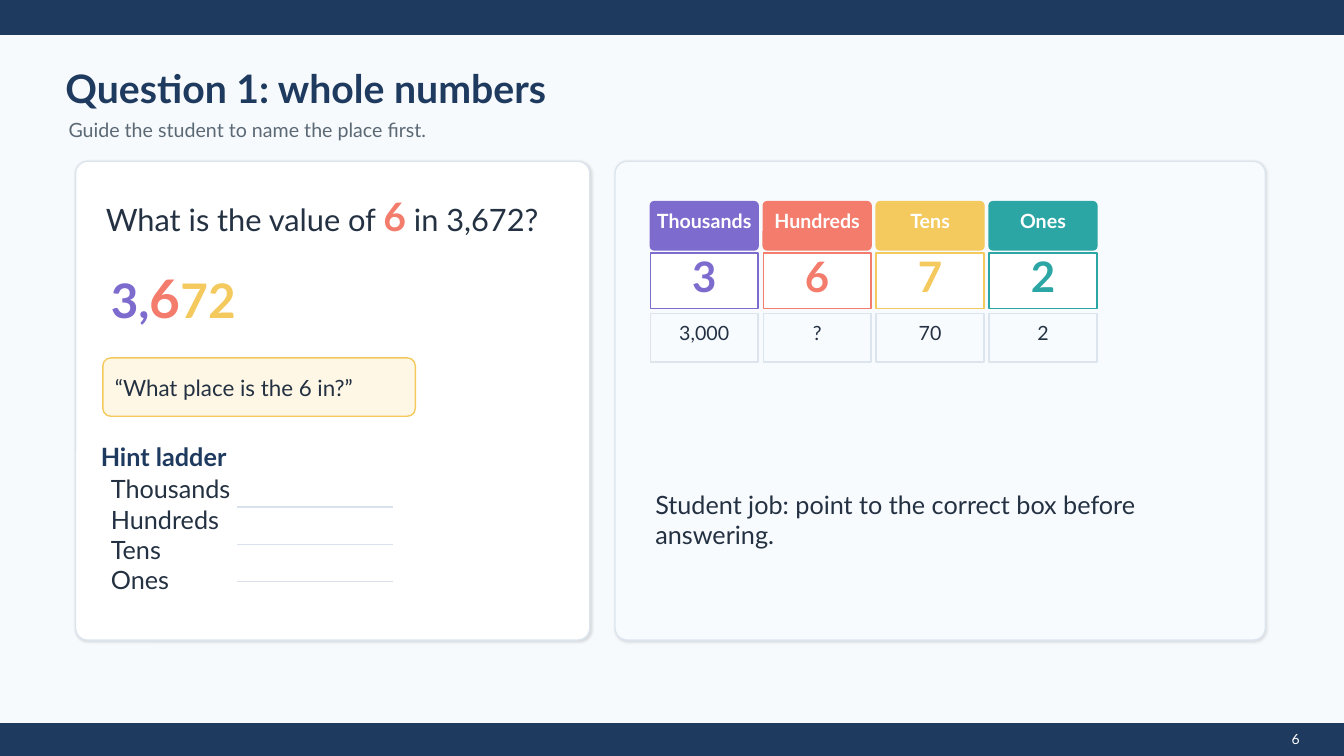
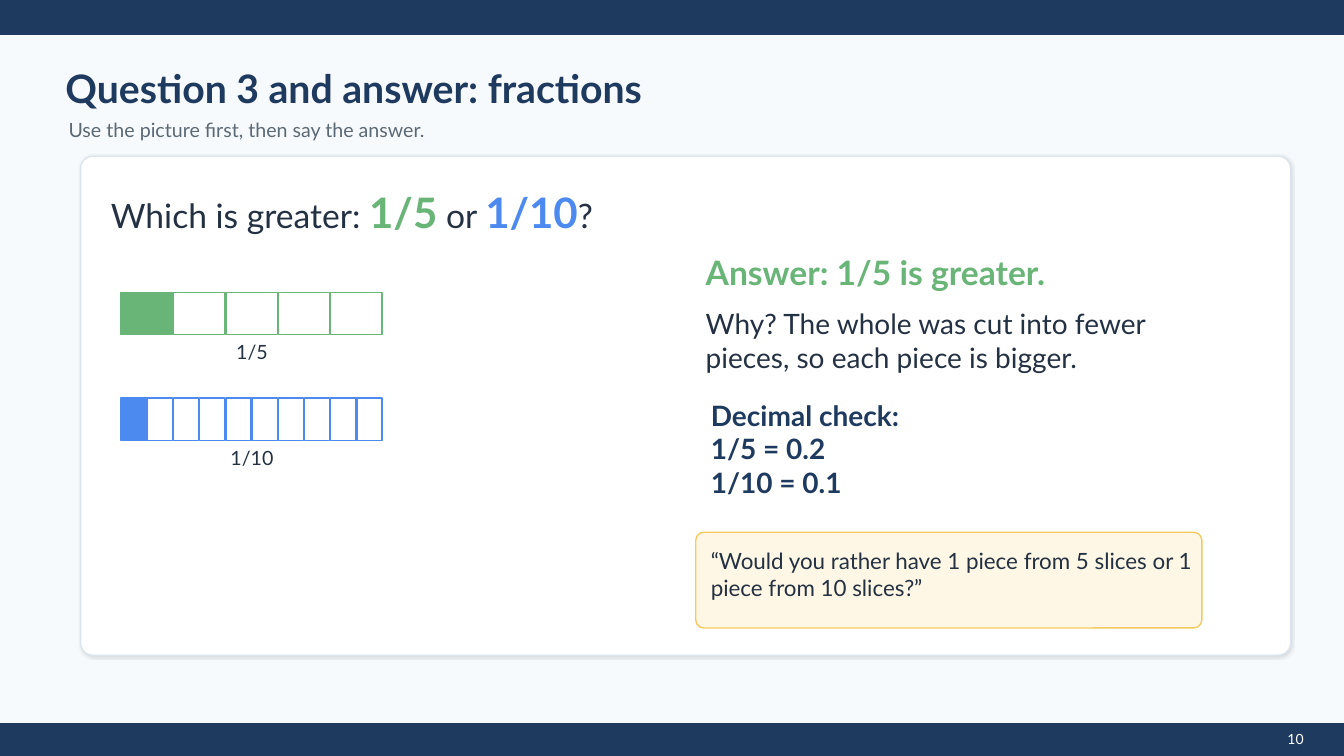
from dataclasses import dataclass
from typing import NamedTuple

from lxml.etree import SubElement
from pptx import Presentation
from pptx.dml.color import RGBColor
from pptx.enum.shapes import MSO_CONNECTOR as Link, MSO_SHAPE as Kind
from pptx.enum.text import MSO_ANCHOR as Anchor, PP_ALIGN as Align
from pptx.oxml.ns import qn
from pptx.shapes.autoshape import Shape
from pptx.slide import Slide
from pptx.util import Inches, Pt

FONT = "Lato"
COLORS = {
    "page": "F7FAFC",
    "navy": "1F3A5F",
    "ink": "233142",
    "gray": "5B6975",
    "white": "FFFFFF",
    "pale": "F8FBFE",
    "edge": "DCE5EE",
    "rule": "D9E2EC",
    "cream": "FFF7E5",
    "violet": "7D6BCE",
    "coral": "F47C6C",
    "gold": "F4C95D",
    "teal": "2CA6A4",
    "green": "69B578",
    "blue": "4D8AF0",
}


class Box(NamedTuple):
    left: float
    top: float
    width: float
    height: float


class Run(NamedTuple):
    text: str
    size: float
    color: str = "ink"
    bold: bool = False


@dataclass
class Place:
    name: str
    digit: str
    value: str
    color: str


@dataclass
class Bar:
    pieces: int
    top: float
    color: str


def paint(name: str) -> RGBColor:
    return RGBColor.from_string(COLORS[name])


def lengths(box: Box) -> list[Inches]:
    return [Inches(side) for side in box]


def add_text(slide: Slide, box: Box, text: str | list[Run], *, size: float = 18,
             color: str = "ink", bold: bool = False, align: Align = Align.LEFT,
             anchor: Anchor = Anchor.MIDDLE, inset: bool = False) -> None:
    frame = slide.shapes.add_textbox(*lengths(box)).text_frame
    frame.word_wrap = True
    frame.vertical_anchor = anchor
    if not inset:
        frame.margin_left = frame.margin_right = 0
        frame.margin_top = frame.margin_bottom = 0
    if isinstance(text, str):
        lines = [[Run(line, size, color, bold)] for line in text.split("\n")]
    else:
        lines = [text]
    for index, line in enumerate(lines):
        para = frame.add_paragraph() if index else frame.paragraphs[0]
        para.alignment = align
        for item in line:
            run = para.add_run()
            run.text = item.text
            run.font.name = FONT
            run.font.size = Pt(item.size)
            run.font.bold = item.bold
            run.font.color.rgb = paint(item.color)


def add_box(slide: Slide, box: Box, fill: str, edge: str, radius: float = 0) -> Shape:
    kind = Kind.ROUNDED_RECTANGLE if radius else Kind.RECTANGLE
    shape = slide.shapes.add_shape(kind, *lengths(box))
    if radius:
        shape.adjustments[0] = radius / min(box.width, box.height)
    shape.fill.solid()
    shape.fill.fore_color.rgb = paint(fill)
    shape.line.color.rgb = paint(edge)
    shape.line.width = Pt(1)
    shape.shadow.inherit = False
    return shape


def add_card(slide: Slide, box: Box, fill: str = "white") -> None:
    card = add_box(slide, box, fill, "edge", 0.12)
    effects = card.element.spPr.find(qn("a:effectLst"))
    shadow = SubElement(effects, qn("a:outerShdw"), blurRad=str(Pt(2)),
                        dist=str(Pt(1)), dir="2700000", algn="tl", rotWithShape="0")
    tint = SubElement(shadow, qn("a:srgbClr"), val="000000")
    SubElement(tint, qn("a:alpha"), val="12000")


def add_quote(slide: Slide, box: Box, inner: Box, text: str) -> None:
    add_box(slide, box, "cream", "gold", 0.08)
    add_text(slide, inner, text, size=16)


def add_rule(slide: Slide, left: float, right: float, top: float) -> None:
    ends = [Inches(side) for side in (left, top, right, top)]
    rule = slide.shapes.add_connector(Link.STRAIGHT, *ends)
    rule.line.color.rgb = paint("rule")
    rule.line.width = Pt(1)
    SubElement(rule.element.spPr, qn("a:effectLst"))


def add_place(slide: Slide, left: float, place: Place) -> None:
    def cell(top: float, height: float) -> Box:
        return Box(left, top, 1.07, height)

    add_box(slide, cell(2, 0.48), place.color, place.color, 0.04)
    add_text(slide, cell(2.08, 0.22), place.name, size=14, color="white",
             bold=True, align=Align.CENTER)
    add_box(slide, cell(2.51, 0.55), "white", place.color)
    add_text(slide, cell(2.58, 0.32), place.digit, size=30, color=place.color,
             bold=True, align=Align.CENTER)
    add_box(slide, cell(3.11, 0.48), "pale", "edge")
    add_text(slide, cell(3.21, 0.18), place.value, size=14, align=Align.CENTER)


def add_bar(slide: Slide, bar: Bar) -> None:
    left, width = 1.2, 2.6
    step = width / bar.pieces
    for index in range(bar.pieces):
        fill = "white" if index else bar.color
        piece = Box(left + index * step, bar.top, step - 0.01, 0.42)
        add_box(slide, piece, fill, bar.color)
    add_text(slide, Box(left, bar.top + 0.48, width, 0.22), f"1/{bar.pieces}",
             size=14, align=Align.CENTER)


def set_master(deck: Presentation, slide: Slide) -> None:
    master = deck.slide_master
    master.background.fill.solid()
    master.background.fill.fore_color.rgb = paint("page")
    for top, height in ((0, 0.34), (7.18, 0.32)):
        band = add_box(slide, Box(0, top, 13.33, height), "navy", "navy")
        master.shapes.element.append(band.element)


def add_slide(deck: Presentation, title: str, lead: str, page: int) -> Slide:
    slide = deck.slides.add_slide(deck.slide_layouts[6])
    if len(deck.slides) == 1:
        set_master(deck, slide)
    add_text(slide, Box(0.65, 0.62, 7, 0.5), title, size=28, color="navy", bold=True)
    add_text(slide, Box(0.68, 1.15, 8.2, 0.28), lead, size=14, color="gray")
    add_text(slide, Box(12.65, 7.2, 0.4, 0.16), str(page), size=10, color="white",
             align=Align.CENTER, anchor=Anchor.TOP, inset=True)
    return slide


def whole_slide(deck: Presentation) -> None:
    slide = add_slide(deck, "Question 1: whole numbers",
                      "Guide the student to name the place first.", 6)
    add_card(slide, Box(0.75, 1.6, 5.1, 4.75))
    add_text(slide, Box(1.05, 1.95, 4.4, 0.38), [
        Run("What is the value of ", 22),
        Run("6", 28, "coral", True),
        Run(" in 3,672?", 22),
    ])
    add_text(slide, Box(1.1, 2.65, 3, 0.6), [
        Run("3,", 34, "violet", True),
        Run("6", 38, "coral", True),
        Run("72", 34, "gold", True),
    ])
    add_quote(slide, Box(1.02, 3.55, 3.1, 0.58), Box(1.14, 3.63, 2.86, 0.42),
              "“What place is the 6 in?”")

    places = [
        Place("Thousands", "3", "3,000", "violet"),
        Place("Hundreds", "6", "?", "coral"),
        Place("Tens", "7", "70", "gold"),
        Place("Ones", "2", "2", "teal"),
    ]
    add_text(slide, Box(1, 4.4, 1.5, 0.25), "Hint ladder", color="navy", bold=True)
    add_text(slide, Box(1.1, 4.8, 1.6, 1), "\n".join(place.name for place in places))
    for index in range(3):
        add_rule(slide, 2.35, 3.9, 5.03 + index * 0.37)

    add_card(slide, Box(6.1, 1.6, 6.45, 4.75), "pale")
    for index, place in enumerate(places):
        add_place(slide, 6.45 + index * 1.12, place)
    add_text(slide, Box(6.5, 5, 4.8, 0.3),
             "Student job: point to the correct box before answering.")


def part_slide(deck: Presentation) -> None:
    slide = add_slide(deck, "Question 3 and answer: fractions",
                      "Use the picture first, then say the answer.", 10)
    add_card(slide, Box(0.8, 1.55, 12, 4.95))
    add_text(slide, Box(1.1, 1.9, 5.1, 0.4), [
        Run("Which is greater: ", 24),
        Run("1/5", 30, "green", True),
        Run(" or ", 24),
        Run("1/10", 30, "blue", True),
        Run("?", 24),
    ])
    for bar in (Bar(5, 2.9, "green"), Bar(10, 3.95, "blue")):
        add_bar(slide, bar)
    add_text(slide, Box(7, 2.55, 3.8, 0.3), "Answer: 1/5 is greater.",
             size=24, color="green", bold=True)
    add_text(slide, Box(7, 3.05, 4.7, 0.65),
             "Why? The whole was cut into fewer pieces, so each piece is bigger.", size=20)
    add_text(slide, Box(7.05, 4, 2.2, 0.9), "Decimal check:\n1/5 = 0.2\n1/10 = 0.1",
             size=20, color="navy", bold=True)
    add_quote(slide, Box(6.9, 5.28, 5.02, 0.95), Box(7.05, 5.3, 5.15, 0.79),
              "“Would you rather have 1 piece from 5 slices or 1 piece from 10 slices?”")


def main() -> None:
    deck = Presentation()
    deck.slide_width = Inches(13.33)
    deck.slide_height = Inches(7.5)
    whole_slide(deck)
    part_slide(deck)
    deck.save("out.pptx")


if __name__ == "__main__":
    main()
